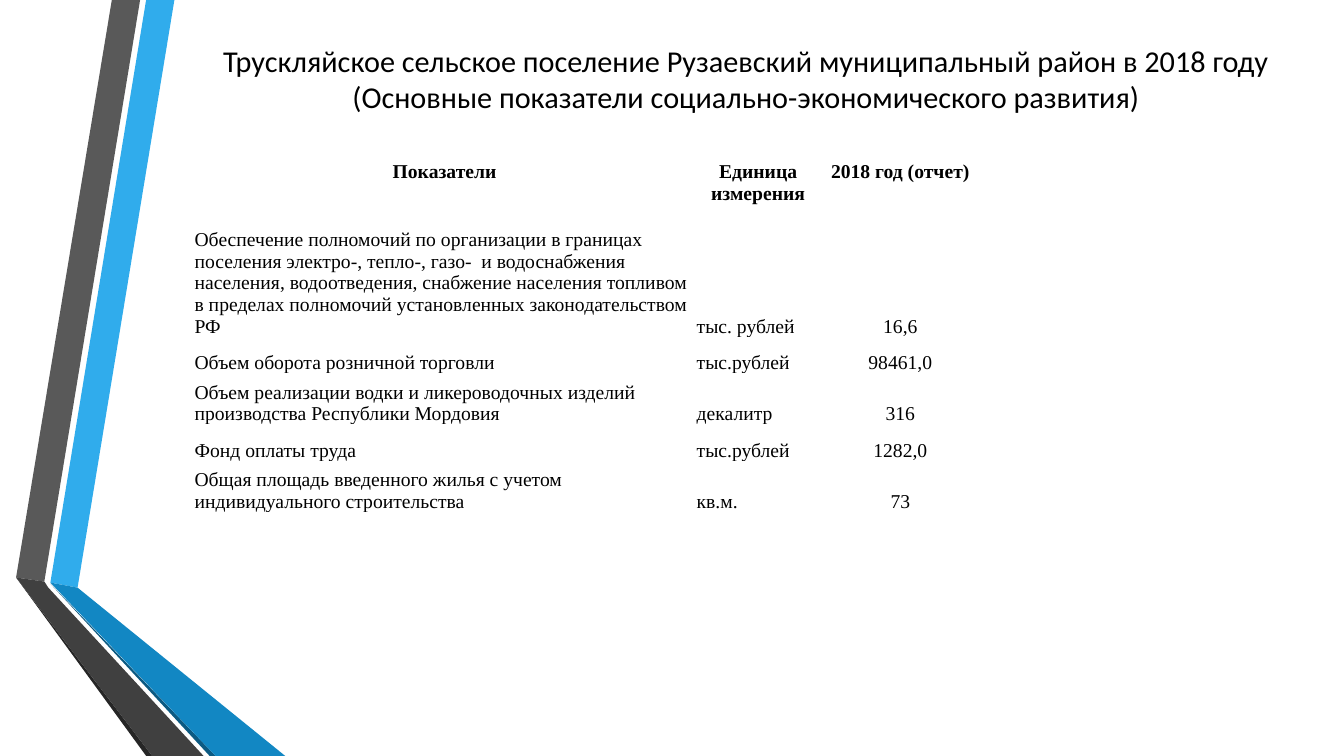
from lxml.etree import SubElement
from pptx import Presentation
from pptx.dml.color import RGBColor
from pptx.enum.text import MSO_ANCHOR, PP_ALIGN
from pptx.oxml.ns import qn
from pptx.util import Inches, Pt

BLACK = RGBColor(0x00, 0x00, 0x00)
WHITE = RGBColor(0xFF, 0xFF, 0xFF)
SKY = RGBColor(0x30, 0xAC, 0xEC)
BLUE = RGBColor(0x12, 0x87, 0xC3)
NAVY = RGBColor(0x0C, 0x5A, 0x82)
GREY = RGBColor(0x59, 0x59, 0x59)
CHARCOAL = RGBColor(0x40, 0x40, 0x40)
SOOT = RGBColor(0x26, 0x26, 0x26)

# Ribbon corners, relative to the left edge of the ribbon box
RIBBONS = [
    (SKY, [(0.34, 5.78), (0.61, 5.83), (1.57, 0), (1.29, 0)]),
    (GREY, [(1.23, 0), (0.95, 0), (0, 5.73), (0.28, 5.77)]),
    (SOOT, [(0, 5.73), (1.29, 7.5), (1.35, 7.5)]),
    (NAVY, [(0.34, 5.79), (1.92, 7.5), (1.98, 7.5)]),
    (BLUE, [(0.34, 5.78), (1.98, 7.5), (2.67, 7.5), (0.61, 5.83)]),
    (CHARCOAL, [(0, 5.73), (1.35, 7.5), (1.86, 7.5), (0.32, 5.83), (0.28, 5.77)]),
]

TITLE = ("Трускляйское сельское поселение Рузаевский муниципальный район в 2018 году\n"
         "(Основные показатели социально-экономического развития)")
TITLE_FONT = {"name": "Calibri", "size": Pt(21.6), "bold": False}
HEADER_FONT = {"name": "Times New Roman", "size": Pt(14), "bold": True}
BODY_FONT = {**HEADER_FONT, "bold": False}

COLUMN_WIDTHS = [4.98, 1.24, 1.58]
ROW_HEIGHTS = [0.41, 1.28, 0.36, 0.51, 0.36, 0.51]
INDICATORS = [
    ("Показатели", "Единица измерения", "2018 год (отчет)"),
    ("Обеспечение полномочий по организации в границах поселения электро-, тепло-, "
     "газо-  и водоснабжения населения, водоотведения, снабжение населения топливом "
     "в пределах полномочий установленных законодательством РФ", "тыс. рублей", "16,6"),
    ("Объем оборота розничной торговли", "тыс.рублей", "98461,0"),
    ("Объем реализации водки и ликероводочных изделий производства Республики Мордовия",
     "декалитр", "316"),
    ("Фонд оплаты труда", "тыс.рублей", "1282,0"),
    ("Общая площадь введенного жилья с учетом индивидуального строительства", "кв.м.", "73"),
]


def set_attributes(target, values):
    for name, value in values.items():
        setattr(target, name, value)


def write_text(paragraph, text, font, alignment):
    paragraph.text = text
    paragraph.alignment = alignment
    for run in paragraph.runs:
        set_attributes(run.font, font)
        run.font.color.rgb = BLACK


def set_borders(cell, color):
    properties = cell._tc.get_or_add_tcPr()
    for position, side in enumerate(("lnL", "lnR", "lnT", "lnB")):
        line = SubElement(properties, qn(f"a:{side}"), w=str(Pt(1)))
        fill = SubElement(line, qn("a:solidFill"))
        SubElement(fill, qn("a:srgbClr"), val=str(color))
        properties.insert(position, line)


def add_ribbons(slide, left, top):
    for color, corners in RIBBONS:
        points = [(Inches(left + x), Inches(top + y)) for x, y in corners]
        builder = slide.shapes.build_freeform(*points[0])
        builder.add_line_segments(points[1:], close=True)
        shape = builder.convert_to_shape()
        shape.shadow.inherit = False
        shape.fill.solid()
        shape.fill.fore_color.rgb = color
        shape.line.fill.background()


def add_title(slide, left, top, width, height):
    box = slide.shapes.add_textbox(Inches(left), Inches(top), Inches(width), Inches(height))
    set_attributes(box.text_frame, {"word_wrap": True, "vertical_anchor": MSO_ANCHOR.MIDDLE})
    write_text(box.text_frame.paragraphs[0], TITLE, TITLE_FONT, PP_ALIGN.CENTER)


def add_indicator_table(slide, left, top):
    table = slide.shapes.add_table(
        len(ROW_HEIGHTS), len(COLUMN_WIDTHS), Inches(left), Inches(top),
        Inches(sum(COLUMN_WIDTHS)), Inches(sum(ROW_HEIGHTS))).table
    set_attributes(table, {"first_row": False, "horz_banding": False})
    for column, width in zip(table.columns, COLUMN_WIDTHS):
        column.width = Inches(width)
    for row, height in zip(table.rows, ROW_HEIGHTS):
        row.height = Inches(height)

    inset = Inches(0.01)
    for row_index, texts in enumerate(INDICATORS):
        is_header = row_index == 0
        for column_index, text in enumerate(texts):
            cell = table.cell(row_index, column_index)
            set_attributes(cell, {
                "margin_left": inset, "margin_right": inset,
                "margin_top": inset, "margin_bottom": 0,
                "vertical_anchor": MSO_ANCHOR.TOP if is_header else MSO_ANCHOR.BOTTOM,
            })
            cell.fill.background()
            set_borders(cell, WHITE)
            centered = is_header or column_index == 2
            write_text(cell.text_frame.paragraphs[0], text,
                       HEADER_FONT if is_header else BODY_FONT,
                       PP_ALIGN.CENTER if centered else PP_ALIGN.LEFT)


def main():
    presentation = Presentation()
    set_attributes(presentation, {"slide_width": Inches(13.33), "slide_height": Inches(7.5)})
    slide = presentation.slides.add_slide(presentation.slide_layouts[6])
    slide.background.fill.solid()
    slide.background.fill.fore_color.rgb = WHITE

    add_ribbons(slide, 0.16, 0)
    add_title(slide, 1.92, 0.27, 10.96, 1.01)
    add_indicator_table(slide, 1.92, 1.59)
    presentation.save("out.pptx")


if __name__ == "__main__":
    main()
